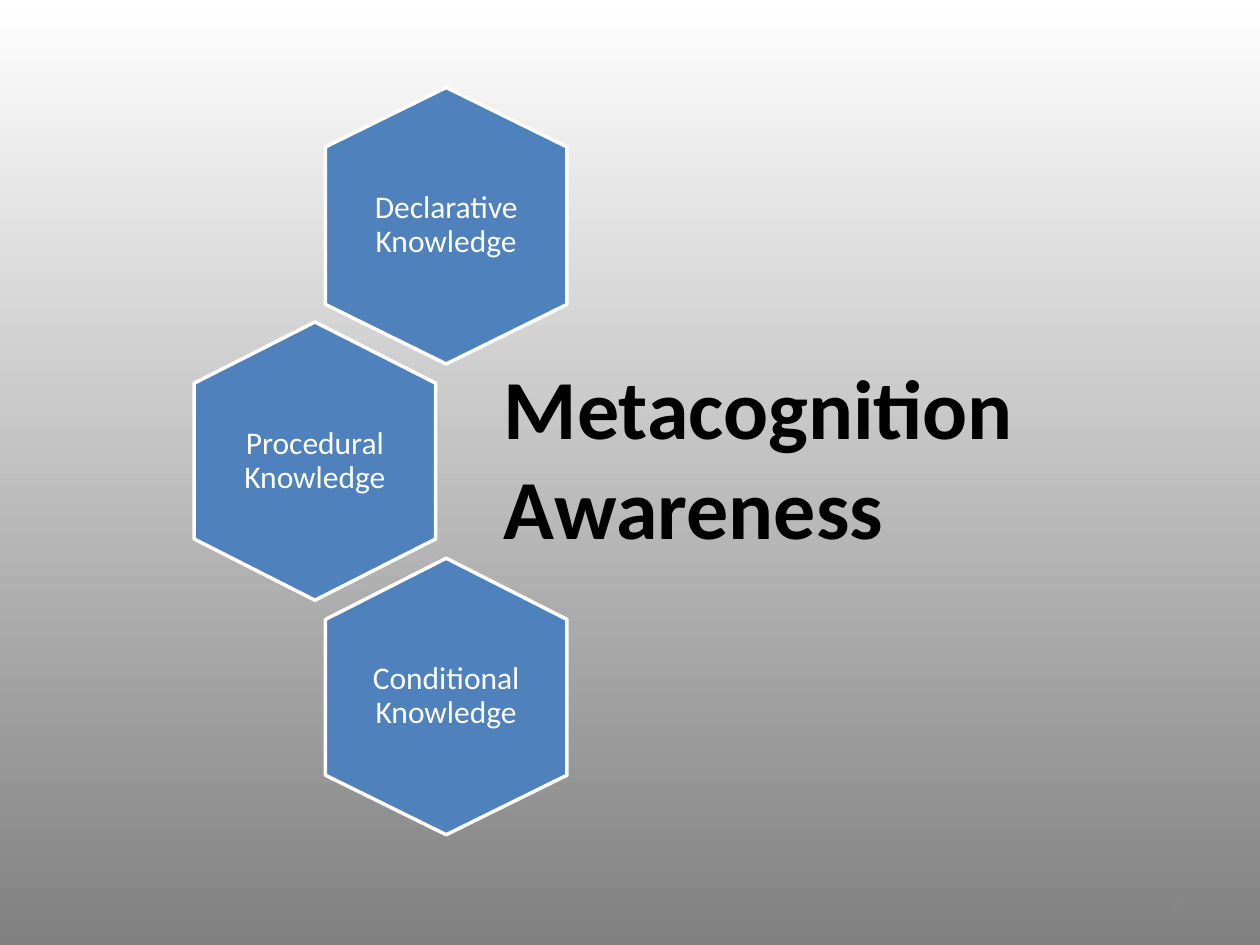
from dataclasses import dataclass

from lxml import etree
from pptx import Presentation
from pptx import util as u
from pptx.dml.color import RGBColor
from pptx.enum import text

# Content: label and column (0 left, 1 right) of each hexagon, top to bottom
HEXAGONS = [
    ("Declarative Knowledge", 1),
    ("Procedural Knowledge", 0),
    ("Conditional Knowledge", 1),
]
TITLE = "Metacognition\nAwareness"
PAGE_NUMBER = "8"


@dataclass(frozen=True)
class Theme:
    font: str = "Calibri"
    hexagon: str = "4F81BD"
    light: str = "FFFFFF"
    dark: str = "000000"
    shade: str = "808080"
    muted: str = "898989"
    title_size: int = 48
    label_size: int = 18
    number_size: int = 12


THEME = Theme()

# Layout in points
LEFT, TOP = 110.9, 49.7
WIDTH, HEIGHT, SHOULDER = 138.2, 158.4, 34.6
COLUMN_STEP, ROW_STEP = 74.9, 134.6
INSET_X, INSET_Y = 26.6, 30.2


def style_text(frame, size, color, align=text.PP_ALIGN.LEFT, bold=False):
    for para in frame.paragraphs:
        para.alignment = align
        for span in para.runs:
            span.font.name = THEME.font
            span.font.size = u.Pt(size)
            span.font.bold = bold
            span.font.color.rgb = RGBColor.from_string(color)


def add_hexagon(page, label, left, top):
    middle, right = left + WIDTH / 2, left + WIDTH
    upper, lower, bottom = top + SHOULDER, top + HEIGHT - SHOULDER, top + HEIGHT
    outline = page.shapes.build_freeform(middle, top, scale=u.Pt(1))
    outline.add_line_segments([(right, upper), (right, lower), (middle, bottom),
                               (left, lower), (left, upper)], close=True)
    shape = outline.convert_to_shape()
    shape.shadow.inherit = False
    shape.fill.solid()
    shape.fill.fore_color.rgb = RGBColor.from_string(THEME.hexagon)
    shape.line.color.rgb = RGBColor.from_string(THEME.light)
    shape.line.width = u.Pt(2)

    frame = shape.text_frame
    frame.word_wrap = True
    frame.vertical_anchor = text.MSO_ANCHOR.MIDDLE
    frame.margin_left = frame.margin_right = u.Pt(INSET_X)
    frame.margin_top = frame.margin_bottom = u.Pt(INSET_Y)
    frame.text = label
    style_text(frame, THEME.label_size, THEME.light, text.PP_ALIGN.CENTER)
    para = frame.paragraphs[0]
    para.line_spacing = 0.9
    # Space after as a share of the type size
    namespace = "{http://schemas.openxmlformats.org/drawingml/2006/main}"
    para.space_after = u.Pt(0)
    after = para._p.pPr.find(namespace + "spcAft")
    after.remove(after[0])
    etree.SubElement(after, namespace + "spcPct", val="35000")


def add_text(page, words, left, top, width, height):
    box = page.shapes.add_textbox(*map(u.Pt, (left, top, width, height)))
    box.text_frame.word_wrap = True
    box.text_frame.text = words
    return box.text_frame


def main():
    deck = Presentation()
    deck.slide_width, deck.slide_height = u.Pt(720), u.Pt(540)
    page = deck.slides.add_slide(deck.slide_layouts[6])

    # Background: grey at the bottom, white at the top
    fill = page.background.fill
    fill.gradient()
    fill.gradient_angle = 90
    for stop, color, position in zip(fill.gradient_stops,
                                     (THEME.shade, THEME.light), (0, 1)):
        stop.color.rgb = RGBColor.from_string(color)
        stop.position = position

    # Interlocking hexagons
    for row, (label, column) in enumerate(HEXAGONS):
        add_hexagon(page, label, LEFT + column * COLUMN_STEP, TOP + row * ROW_STEP)

    # Title
    frame = add_text(page, TITLE, 280.8, 199.4, 417.6, 123.8)
    frame.auto_size = text.MSO_AUTO_SIZE.SHAPE_TO_FIT_TEXT
    style_text(frame, THEME.title_size, THEME.dark, bold=True)

    # Page number
    frame = add_text(page, PAGE_NUMBER, 516, 500.5, 168, 28.8)
    frame.vertical_anchor = text.MSO_ANCHOR.MIDDLE
    style_text(frame, THEME.number_size, THEME.muted, text.PP_ALIGN.RIGHT)

    deck.save("out.pptx")


if __name__ == "__main__":
    main()
